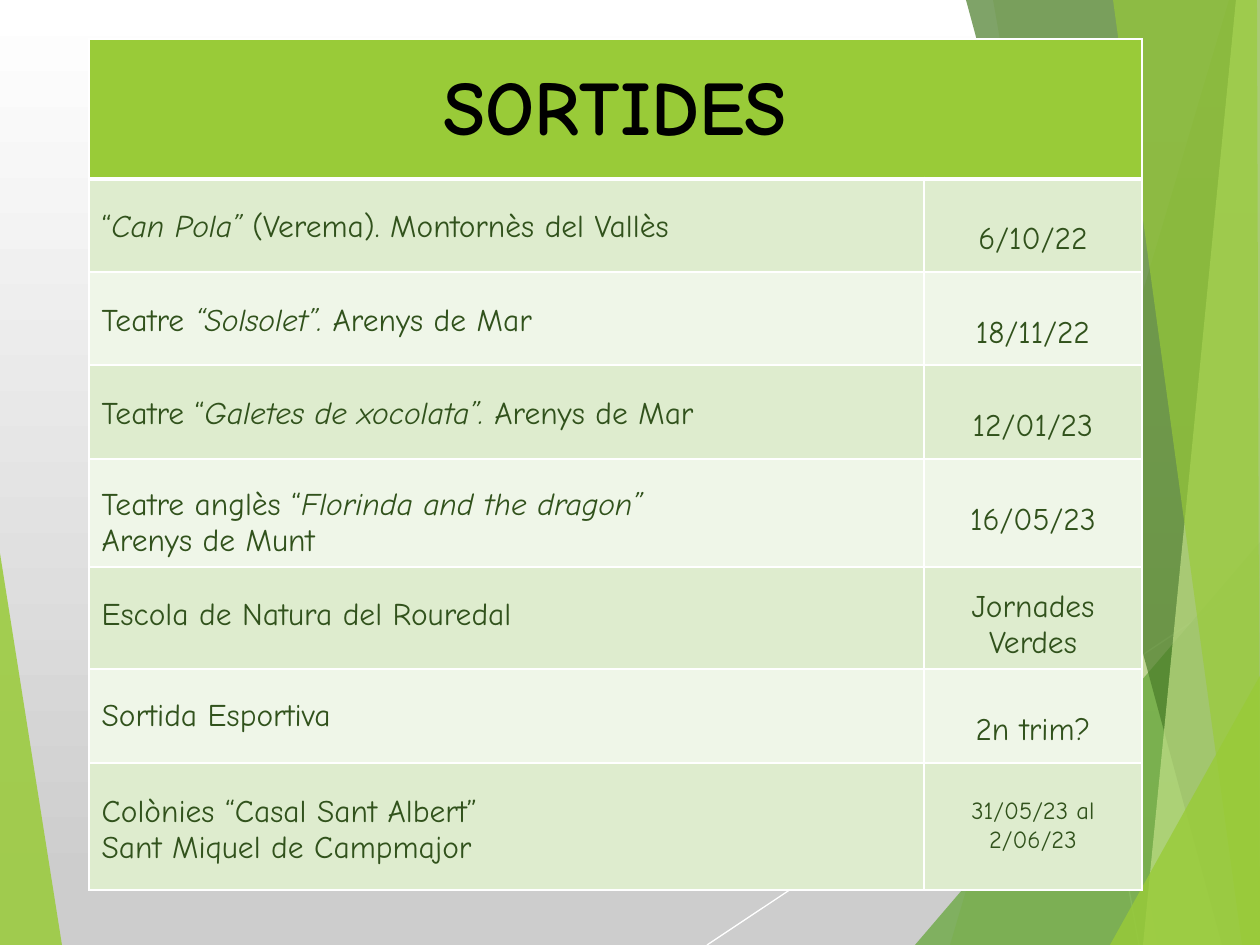
from dataclasses import dataclass

from lxml import etree
from pptx import Presentation
from pptx.dml.color import RGBColor
from pptx.enum.shapes import MSO_CONNECTOR
from pptx.enum.text import MSO_ANCHOR, PP_ALIGN
from pptx.oxml.ns import qn
from pptx.util import Pt

STRAIGHT = MSO_CONNECTOR.STRAIGHT
TOP = MSO_ANCHOR.TOP
CENTER, LEFT = PP_ALIGN.CENTER, PP_ALIGN.LEFT
EMU_PER_PX = 914400 / 126


@dataclass(frozen=True)
class Theme:
    font: str = "Comic Neue"
    title_size: int = 44
    body_size: int = 18
    small_size: int = 14
    lime: str = "99CB38"
    pale_lime: str = "C2E088"
    green: str = "63A537"
    dark_green: str = "4A7C29"
    text: str = "31521C"
    title: str = "000000"
    white: str = "FFFFFF"
    grey: str = "CDCDCD"
    bands: tuple = ("DEECCE", "EFF6E8")


theme = Theme()


def px(length):
    return round(length * EMU_PER_PX)


def style_cell(cell, fill, align, top, size, color, edges):
    """Fill, borders (points for L, R, T, B), top margin and type of a cell."""
    cell.fill.solid()
    cell.fill.fore_color.rgb = RGBColor.from_string(fill)
    cell.vertical_anchor = TOP
    cell.margin_top = px(top)
    properties = cell._tc.get_or_add_tcPr()
    for position, (side, points) in enumerate(zip("LRTB", edges)):
        border = etree.Element(qn(f"a:ln{side}"), w=str(Pt(points)))
        solid = etree.SubElement(border, qn("a:solidFill"))
        etree.SubElement(solid, qn("a:srgbClr"), val=theme.white)
        properties.insert(position, border)
    for paragraph in cell.text_frame.paragraphs:
        paragraph.alignment = align
        for run in paragraph.runs:
            run.font.name = theme.font
            run.font.size = Pt(size)
            run.font.bold = size == theme.title_size
            run.font.color.rgb = RGBColor.from_string(color)


prs = Presentation()
prs.slide_width, prs.slide_height = px(1260), px(945)
slide = prs.slides.add_slide(prs.slide_layouts[6])

# Background gradient, white at the top
backdrop = slide.background.fill
backdrop.gradient()
backdrop.gradient_angle = 270
for stop, color, position in zip(
    backdrop.gradient_stops, (theme.white, theme.grey), (0, 0.94)
):
    stop.color.rgb = RGBColor.from_string(color)
    stop.position = position

# Thin white lines behind the facets
for ends in ((707, 945, 1261, 576), (970, 0, 1139, 945)):
    ray = slide.shapes.add_connector(STRAIGHT, *map(px, ends))
    ray.line.color.rgb = RGBColor.from_string(theme.white)
    ray.line.width = Pt(0.75)
    etree.SubElement(ray._element.spPr, qn("a:effectLst"))

# Translucent green facets: colour, opacity in percent, corners
facets = [
    (theme.lime, 85, [(0, 553), (62, 945), (0, 945)]),
    (theme.lime, 30, [(1229, 0), (950, 945), (1261, 945), (1261, 0)]),
    (theme.lime, 20, [(993, 0), (1158, 945), (1261, 945), (1261, 0)]),
    (theme.green, 72, [(915, 945), (1261, 541), (1261, 945)]),
    (theme.dark_green, 70, [(966, 0), (1222, 945), (1261, 945), (1261, 0)]),
    (theme.pale_lime, 70, [(1236, 0), (1143, 945), (1261, 945), (1260, 0)]),
    (theme.lime, 65, [(1113, 0), (1242, 945), (1260, 945), (1257, 0)]),
    (theme.lime, 80, [(1110, 945), (1261, 674), (1261, 945)]),
]
for color, opacity, corners in facets:
    outline = slide.shapes.build_freeform(*corners[0], scale=EMU_PER_PX)
    outline.add_line_segments(corners[1:], close=True)
    facet = outline.convert_to_shape()
    facet.shadow.inherit = False
    facet.line.fill.background()
    facet.fill.solid()
    facet.fill.fore_color.rgb = RGBColor.from_string(color)
    tint = facet._element.spPr.find(qn("a:solidFill"))[0]
    etree.SubElement(tint, qn("a:alpha"), val=str(opacity * 1000))

# Outings: row height, lines of runs (regular and italic in turn), top margin
# of the outing, date, top margin and size of the date
outings = [
    (93, [["“", "Can Pola” ", "(Verema). Montornès del Vallès"]], 30,
     "6/10/22", 42, theme.body_size),
    (93, [["Teatre ", "“Solsolet”. ", "Arenys de Mar"]], 31,
     "18/11/22", 43, theme.body_size),
    (94, [["Teatre “", "Galetes de xocolata”. ", "Arenys de Mar"]], 31,
     "12/01/23", 43, theme.body_size),
    (108, [["Teatre anglès “", "Florinda and the dragon”"], ["Arenys de Munt"]], 28,
     "16/05/23", 43, theme.body_size),
    (102, [["Escola de Natura del Rouredal"]], 30,
     "Jornades Verdes", 22, theme.body_size),
    (94, [["Sortida Esportiva"]], 29,
     "2n trim?", 43, theme.body_size),
    (127, [["Colònies “Casal Sant Albert”"], ["Sant Miquel de Campmajor"]], 31,
     "31/05/23 al 2/06/23", 35, theme.small_size),
]
header_height = 140
table_height = header_height + sum(outing[0] for outing in outings)
table = slide.shapes.add_table(
    len(outings) + 1, 2, px(89), px(39), px(1053), px(table_height)
).table
table.columns[0].width, table.columns[1].width = px(835), px(218)

# Header across both columns
table.rows[0].height = px(header_height)
header = table.cell(0, 0)
header.merge(table.cell(0, 1))
header.text_frame.text = "SORTIDES"
for cell in table.rows[0].cells:
    style_cell(cell, theme.lime, CENTER, 27, theme.title_size, theme.title, (1, 1, 1, 3))

# One banded row per outing
for number, outing in enumerate(outings, start=1):
    height, lines, label_top, date, date_top, date_size = outing
    table.rows[number].height = px(height)
    label_cell, date_cell = table.rows[number].cells
    label = label_cell.text_frame
    for index, pieces in enumerate(lines):
        paragraph = label.add_paragraph() if index else label.paragraphs[0]
        for turn, piece in enumerate(pieces):
            run = paragraph.add_run()
            run.text = piece
            run.font.italic = turn % 2 == 1
    date_cell.text_frame.text = date
    band = theme.bands[(number - 1) % 2]
    edges = (1, 1, 3 if number == 1 else 1, 1)
    style_cell(label_cell, band, LEFT, label_top, theme.body_size, theme.text, edges)
    style_cell(date_cell, band, CENTER, date_top, date_size, theme.text, edges)

prs.save("out.pptx")
